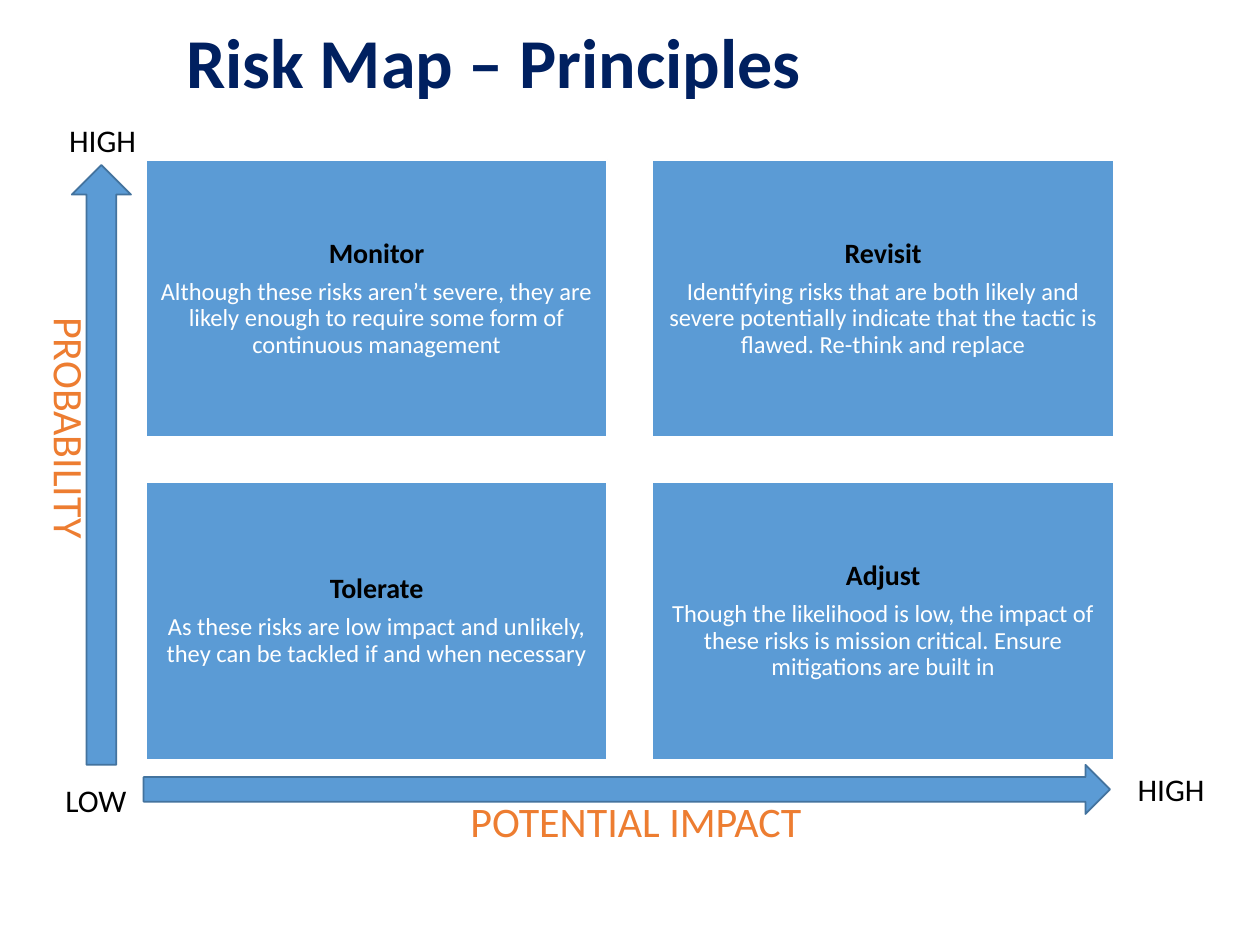
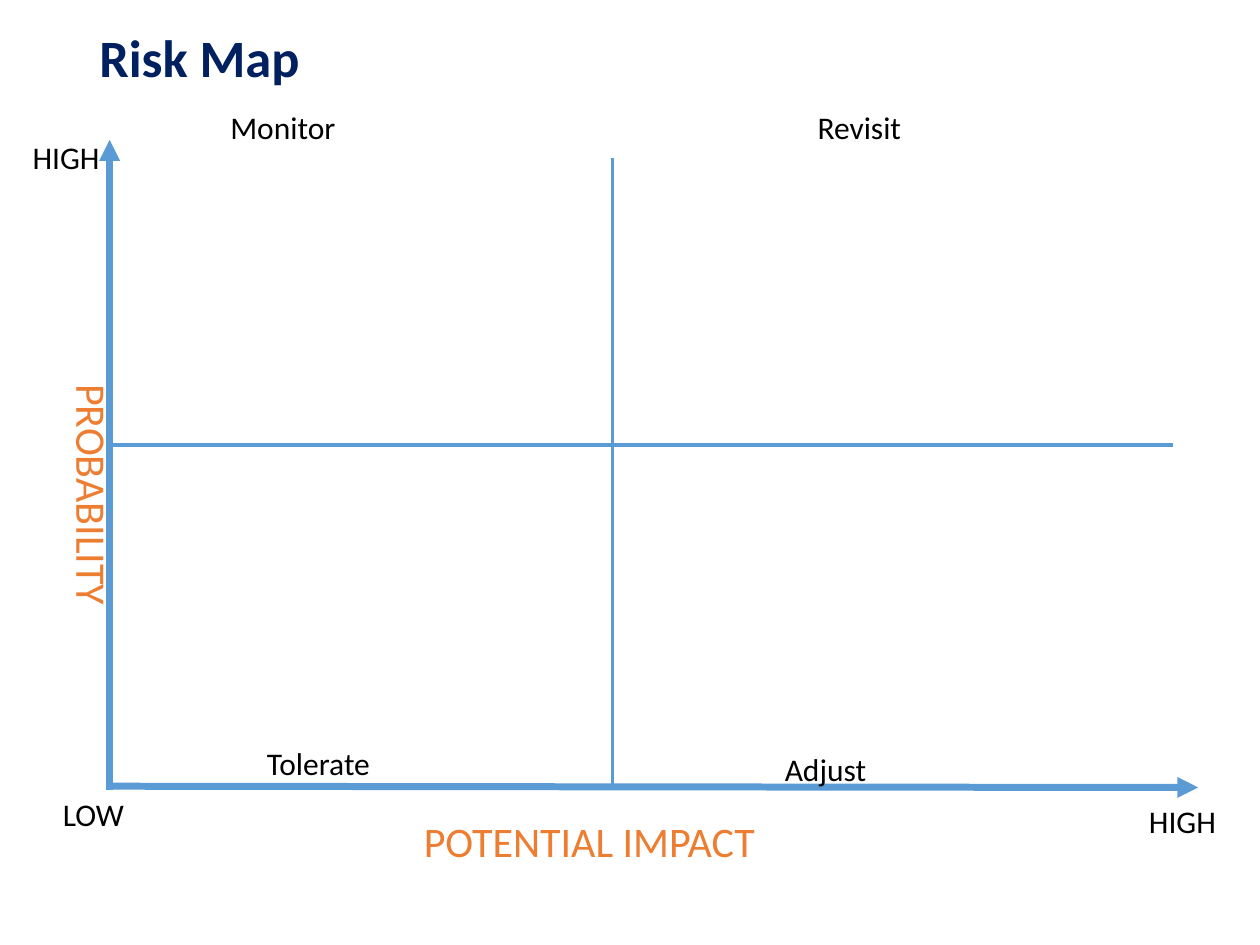
from dataclasses import dataclass

from lxml.etree import SubElement
from pptx import Presentation
from pptx.dml.color import RGBColor
from pptx.enum.shapes import MSO_CONNECTOR, MSO_SHAPE
from pptx.enum.text import MSO_ANCHOR, MSO_AUTO_SIZE, PP_ALIGN
from pptx.oxml.ns import qn
from pptx.util import Emu, Pt


@dataclass(frozen=True)
class Theme:
    font: str = "Calibri"
    navy: str = "002060"
    blue: str = "5B9BD5"
    edge: str = "43739E"
    orange: str = "ED7D31"
    black: str = "000000"
    white: str = "FFFFFF"
    title_size: int = 40
    small_title_size: int = 30
    axis_size: int = 24
    label_size: int = 18
    heading_size: int = 16
    body_size: int = 14


T = Theme()
EMU_PER_PX = 9144  # 100 px to the inch

STRATEGIES = [
    ("Monitor", "Although these risks aren’t severe, they are likely enough "
                "to require some form of continuous management"),
    ("Revisit", "Identifying risks that are both likely and severe potentially "
                "indicate that the tactic is flawed. Re-think and replace"),
    ("Tolerate", "As these risks are low impact and unlikely, they can be "
                 "tackled if and when necessary"),
    ("Adjust", "Though the likelihood is low, the impact of these risks is "
               "mission critical. Ensure mitigations are built in"),
]


def px(*values):
    return [Emu(v * EMU_PER_PX) for v in values]


def rgb(color):
    return RGBColor.from_string(color)


def add_run(p, text, size, color, bold=False):
    r = p.add_run()
    r.text = text
    r.font.name = T.font
    r.font.size = Pt(size)
    r.font.bold = bold
    r.font.color.rgb = rgb(color)


def add_text(s, box, text, size, color, bold=False, wrap=True):
    sp = s.shapes.add_textbox(*px(*box))
    tf = sp.text_frame
    tf.word_wrap = wrap
    add_run(tf.paragraphs[0], text, size, color, bold)
    return sp


def add_label(s, box, text, wrap=True):
    sp = add_text(s, box, text, T.label_size, T.black, wrap=wrap)
    sp.text_frame.auto_size = MSO_AUTO_SIZE.SHAPE_TO_FIT_TEXT


def add_title(s, x, y, text, size):
    tf = add_text(s, (x, y, 862, 78), text, size, T.navy, bold=True).text_frame
    tf.vertical_anchor = MSO_ANCHOR.MIDDLE
    tf.paragraphs[0].line_spacing = 0.9


def add_axis_name(s, box, text, rotation=0):
    """Text running downwards, turned with its box by the rotation."""
    sp = add_text(s, box, text, T.axis_size, T.orange)
    sp.rotation = rotation
    sp.text_frame.auto_size = MSO_AUTO_SIZE.SHAPE_TO_FIT_TEXT
    sp.text_frame._txBody.bodyPr.set("vert", "vert")


def add_axis_labels(s, probability, impact, top, origin, right):
    """Name both axes and mark their ends; top, origin and right are corners."""
    add_axis_name(s, probability, "PROBABILITY")
    add_axis_name(s, impact, "POTENTIAL IMPACT", rotation=270)
    add_label(s, (*origin, 80, 40), "LOW")
    for corner in (top, right):
        add_label(s, (*corner, 78, 40), "HIGH")


def add_block(s, kind, box, line):
    sp = s.shapes.add_shape(kind, *px(*box))
    sp.shadow.inherit = False
    sp.fill.solid()
    sp.fill.fore_color.rgb = rgb(T.blue)
    sp.line.color.rgb = rgb(line)
    sp.line.width = Pt(1)
    return sp


def add_line(s, start, end, width, arrow=False):
    c = s.shapes.add_connector(MSO_CONNECTOR.STRAIGHT, *px(*start, *end))
    c.line.color.rgb = rgb(T.blue)
    c.line.width = Pt(width)
    if arrow:
        SubElement(c.line._get_or_add_ln(), qn("a:tailEnd"), type="triangle")
    SubElement(c._element.spPr, qn("a:effectLst"))


def add_strategy(s, box, heading, body):
    tf = add_block(s, MSO_SHAPE.RECTANGLE, box, T.white).text_frame
    tf.word_wrap = True
    tf.vertical_anchor = MSO_ANCHOR.MIDDLE
    inset, = px(7)
    tf.margin_left = tf.margin_top = tf.margin_right = tf.margin_bottom = inset
    for p, text, size, color, bold in (
            (tf.paragraphs[0], heading, T.heading_size, T.black, True),
            (tf.add_paragraph(), body, T.body_size, T.white, False)):
        p.alignment = PP_ALIGN.CENTER
        p.line_spacing = 0.9
        p.space_after = Pt(0.35 * size)
        add_run(p, text, size, color, bold)


def strategy_grid(s, box, gap=36):
    x, y, w, h = box
    cell_w, cell_h = (w - gap) // 2, (h - gap) // 2
    for i, (heading, body) in enumerate(STRATEGIES):
        row, col = divmod(i, 2)
        cell = (x + col * (cell_w + gap), y + row * (cell_h + gap), cell_w, cell_h)
        add_strategy(s, cell, heading, body)


def block_axes(s, box):
    """Block arrows along the left and lower side of the box."""
    x, y, w, h = box
    bottom = y + h
    add_block(s, MSO_SHAPE.UP_ARROW, (x - 59, y + 4, 47, h), T.edge)
    add_block(s, MSO_SHAPE.RIGHT_ARROW, (x - 2, bottom + 4, w - 1, 39), T.edge)
    add_axis_labels(s,
                    probability=(x - 96, y + 115, 61, 227),
                    impact=(x + 371, bottom - 100, 61, 308),
                    top=(x - 71, y - 36),
                    origin=(x - 74, bottom + 12),
                    right=(x + w + 9, bottom + 3))


def quadrant_chart(s, box):
    """Empty map: two axes, two dividers and the name of each quadrant."""
    x, y, w, h = box
    bottom = y + h
    add_line(s, (x, y + 228), (x + w - 20, y + 228), 2)
    add_line(s, (x + 399, y), (x + 399, bottom - 2), 2)
    add_line(s, (x, bottom + 3), (x, y - 14), 4, arrow=True)
    add_line(s, (x, bottom), (x + w, bottom + 1), 4, arrow=True)
    places = [(86, -44, 104), (552, -44, 87), (115, h - 38, 103), (526, h - 34, 85)]
    for (name, _), (dx, dy, width) in zip(STRATEGIES, places):
        add_label(s, (x + dx, y + dy, width, 40), name, wrap=False)
    add_axis_labels(s,
                    probability=(x - 49, y + 170, 61, 211),
                    impact=(x + 395, bottom - 137, 61, 372),
                    top=(x - 71, y - 20),
                    origin=(x - 47, bottom + 2),
                    right=(x + w - 49, bottom + 8))


def principles_slide(s):
    box = (116, 127, 768, 476)
    add_title(s, 138, 13, "Risk Map – Principles", T.title_size)
    strategy_grid(s, box)
    block_axes(s, box)


def map_slide(s):
    add_title(s, 69, 9, "Risk Map", T.small_title_size)
    quadrant_chart(s, (87, 125, 864, 499))


def main():
    prs = Presentation()
    prs.slide_width, prs.slide_height = px(1000, 750)
    for build in (principles_slide, map_slide):
        build(prs.slides.add_slide(prs.slide_layouts[6]))
    prs.save("out.pptx")


if __name__ == "__main__":
    main()
